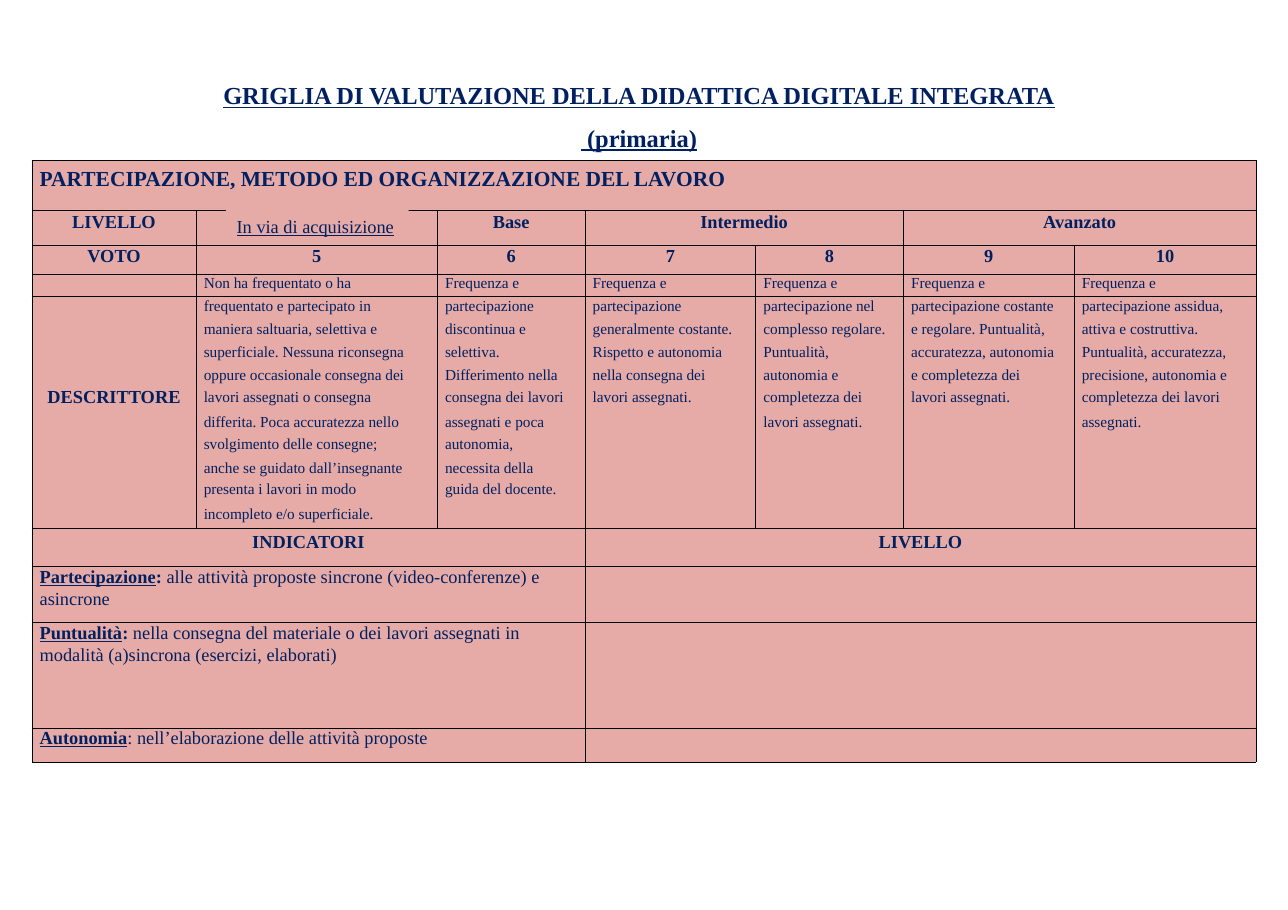
from lxml.etree import SubElement
from pptx import Presentation
from pptx.dml.color import RGBColor
from pptx.enum.shapes import MSO_SHAPE
from pptx.enum.text import MSO_ANCHOR, PP_ALIGN
from pptx.oxml import parse_xml
from pptx.oxml.ns import nsdecls, qn
from pptx.util import Inches, Pt

NAVY, PINK, BLACK = "002060", "E7ABA7", "000000"
FONT = "Times New Roman"
NO_STYLE = "{2D5ABB26-0587-4C30-8999-92F81FD0307C}"
BOLD = {"bold": True}
LABEL = {"bold": True, "underline": True}

TITLE = ["GRIGLIA DI VALUTAZIONE DELLA DIDATTICA DIGITALE INTEGRATA", " (primaria)"]
HEADING = "PARTECIPAZIONE, METODO ED ORGANIZZAZIONE DEL LAVORO"
FIRST_LEVEL = "In via di acquisizione"
# column: (text, columns covered)
LEVELS = {0: ("LIVELLO", 1), 2: ("Base", 1), 3: ("Intermedio", 2), 5: ("Avanzato", 2)}
GRADES = ["VOTO", "5", "6", "7", "8", "9", "10"]
DESCRIPTORS = [
    ["Non ha frequentato o ha", "frequentato e partecipato in", "maniera saltuaria, selettiva e",
     "superficiale. Nessuna riconsegna", "oppure occasionale consegna dei",
     "lavori assegnati o consegna", "differita. Poca accuratezza nello",
     "svolgimento delle consegne;", "anche se guidato dall’insegnante",
     "presenta i lavori in modo", "incompleto e/o superficiale."],
    ["Frequenza e", "partecipazione", "discontinua e", "selettiva.", "Differimento nella",
     "consegna dei lavori", "assegnati e poca", "autonomia,", "necessita della",
     "guida del docente."],
    ["Frequenza e", "partecipazione", "generalmente costante.", "Rispetto e autonomia",
     "nella consegna dei", "lavori assegnati."],
    ["Frequenza e", "partecipazione nel", "complesso regolare.", "Puntualità,",
     "autonomia e", "completezza dei", "lavori assegnati."],
    ["Frequenza e", "partecipazione costante", "e regolare. Puntualità,",
     "accuratezza, autonomia", "e completezza dei", "lavori assegnati."],
    ["Frequenza e", "partecipazione assidua,", "attiva e costruttiva.",
     "Puntualità, accuratezza,", "precisione, autonomia e", "completezza dei lavori",
     "assegnati."],
]
INDICATORS = [
    [[("Partecipazione", LABEL), (": ", BOLD),
      ("alle attività proposte sincrone (video-conferenze) e", {})],
     [("asincrone", {})]],
    [[("Puntualità", LABEL), (": ", BOLD),
      ("nella consegna del materiale o dei lavori assegnati in", {})],
     [("modalità (a)sincrona (esercizi, elaborati)", {})]],
    [[("Autonomia", LABEL), (": nell’elaborazione delle attività proposte", {})]],
]

COLS = [1.49, 2.19, 1.34, 1.55, 1.34, 1.55, 1.65]
LINE_ROWS = [0.2, 0.21, 0.21, 0.21, 0.2, 0.23, 0.2, 0.21, 0.21, 0.21, 0.22]
LINE_PITCH = [11.6, 11.9, 11.9, 11.9, 11.6, None, 11.5, 11.9, 11.9, None, 11.9]
ROWS = [0.45, 0.32, 0.26, *LINE_ROWS, 0.34, 0.51, 0.96, 0.31]
FIRST_LINE = 3
INDICATOR_HEAD = FIRST_LINE + len(LINE_ROWS)
NAME_ROW = FIRST_LINE + 5
SPLIT = 3


def color(value):
    return RGBColor.from_string(value)


def write(tf, paragraphs, size, align=PP_ALIGN.LEFT, pitch=None, gap=0):
    """Fill a text frame; each paragraph is a list of (text, font settings)."""
    for i, runs in enumerate(paragraphs):
        p = tf.paragraphs[0] if i == 0 else tf.add_paragraph()
        p.alignment = align
        if i:
            p.space_before = Pt(gap)
        elif pitch:
            p.line_spacing = Pt(pitch)
        for text, settings in runs:
            r = p.add_run()
            r.text = text
            for key, value in {"name": FONT, "size": Pt(size), **settings}.items():
                setattr(r.font, key, value)
            r.font.color.rgb = color(NAVY)


def set_borders(cell, sides):
    tcPr = cell._tc.get_or_add_tcPr()
    for i, side in enumerate(s for s in "LRTB" if s in sides):
        tcPr.insert(i, parse_xml(
            f'<a:ln{side} {nsdecls("a")} w="6350"><a:solidFill>'
            f'<a:srgbClr val="{BLACK}"/></a:solidFill></a:ln{side}>'))


def put(table, row, col, paragraphs, size=12, span=1, top=0, left=0, **layout):
    cell = table.cell(row, col)
    if span > 1:
        cell.merge(table.cell(row, col + span - 1))
    cell.margin_top, cell.margin_left = Inches(top), Inches(left)
    write(cell.text_frame, paragraphs, size, **layout)


def add_grid(slide):
    frame = slide.shapes.add_table(len(ROWS), len(COLS), Inches(0.29), Inches(1.46),
                                   Inches(sum(COLS)), Inches(sum(ROWS)))
    table = frame.table
    table.first_row = table.horz_banding = False
    table._tbl.tblPr.find(qn("a:tableStyleId")).text = NO_STYLE
    for col, width in zip(table.columns, COLS):
        col.width = Inches(width)
    for i, (row, height) in enumerate(zip(table.rows, ROWS)):
        row.height = Inches(height)
        inner = FIRST_LINE < i < INDICATOR_HEAD
        sides = "LR" + ("B" if i == INDICATOR_HEAD - 1 else "") if inner else "LRTB"
        for cell in row.cells:
            cell.margin_left = cell.margin_right = cell.margin_top = cell.margin_bottom = 0
            cell.fill.solid()
            cell.fill.fore_color.rgb = color(PINK)
            set_borders(cell, sides)
    return table


def fill_grid(table):
    center = {"align": PP_ALIGN.CENTER}
    put(table, 0, 0, [[(HEADING, BOLD)]], 14, len(COLS), 0.06, 0.07)
    for col, (text, span) in LEVELS.items():
        put(table, 1, col, [[(text, BOLD)]], span=span, top=0.02, **center)
    for col, text in enumerate(GRADES):
        put(table, 2, col, [[(text, BOLD)]], pitch=13.8, **center)
    put(table, NAME_ROW, 0, [[("DESCRITTORE", BOLD)]], pitch=13.3, **center)
    for col, lines in enumerate(DESCRIPTORS, 1):
        for i, (line, pitch) in enumerate(zip(lines, LINE_PITCH)):
            put(table, FIRST_LINE + i, col, [[(line, {})]], 10, left=0.07, pitch=pitch,
                top=0.01 if FIRST_LINE + i == NAME_ROW else 0)
    rest = len(COLS) - SPLIT
    for col, text, span in [(0, "INDICATORI", SPLIT), (SPLIT, "LIVELLO", rest)]:
        put(table, INDICATOR_HEAD, col, [[(text, BOLD)]], span=span, top=0.03, **center)
    for row, paragraphs in enumerate(INDICATORS, INDICATOR_HEAD + 1):
        put(table, row, 0, paragraphs, span=SPLIT, left=0.07, gap=1.4,
            pitch=13.8 if len(paragraphs) > 1 else None)
        put(table, row, SPLIT, [], span=rest)
    # Small type in empty cells keeps their rows low
    for row in table.rows:
        for cell in row.cells:
            if not cell.text_frame.text:
                p = cell.text_frame.paragraphs[0]
                SubElement(p._p, qn("a:endParaRPr"), sz="800")


def main():
    prs = Presentation()
    prs.slide_width, prs.slide_height = Inches(11.69), Inches(8.26)
    slide = prs.slides.add_slide(prs.slide_layouts[6])

    tf = slide.shapes.add_textbox(Inches(1.93), Inches(0.6), Inches(7.74), Inches(0.79)).text_frame
    tf.word_wrap = True
    tf.margin_left = tf.margin_right = tf.margin_bottom = 0
    tf.margin_top = Inches(0.13)
    write(tf, [[(text, LABEL)] for text in TITLE], 16, PP_ALIGN.CENTER, gap=8.4)

    fill_grid(add_grid(slide))

    sp = slide.shapes.add_shape(MSO_SHAPE.RECTANGLE, Inches(2.05), Inches(1.9),
                                Inches(1.66), Inches(0.3))
    sp.shadow.inherit = False
    sp.fill.solid()
    sp.fill.fore_color.rgb = color(PINK)
    sp.line.fill.background()
    sp.text_frame.vertical_anchor = MSO_ANCHOR.MIDDLE
    write(sp.text_frame, [[(FIRST_LEVEL, {"underline": True})]], 12)

    prs.save("out.pptx")


if __name__ == "__main__":
    main()
